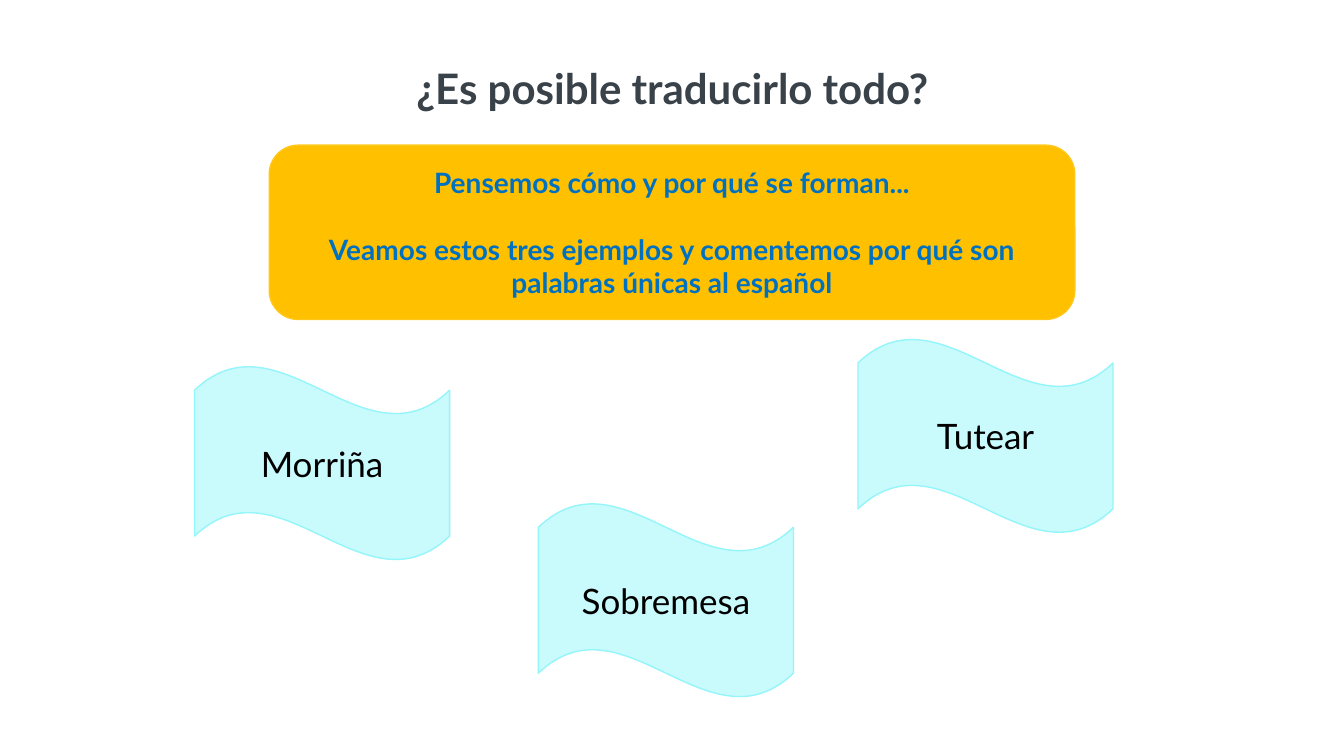
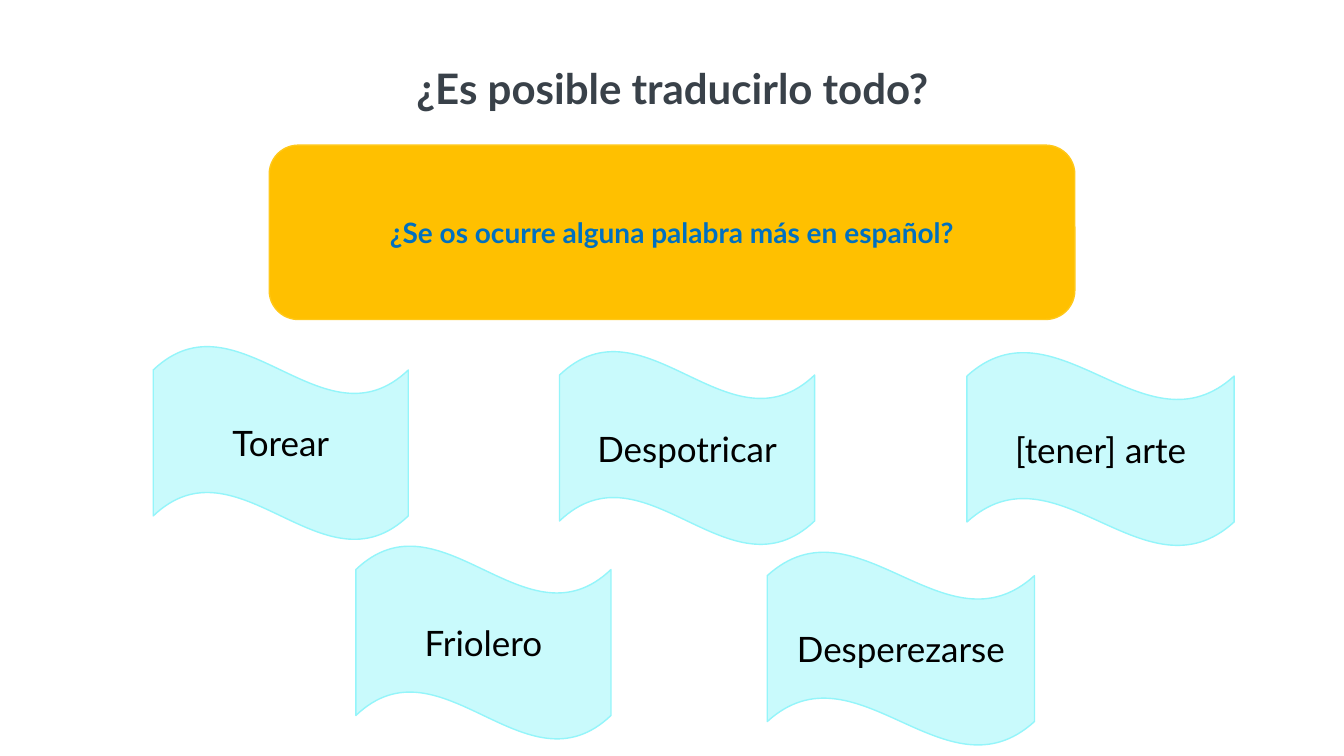
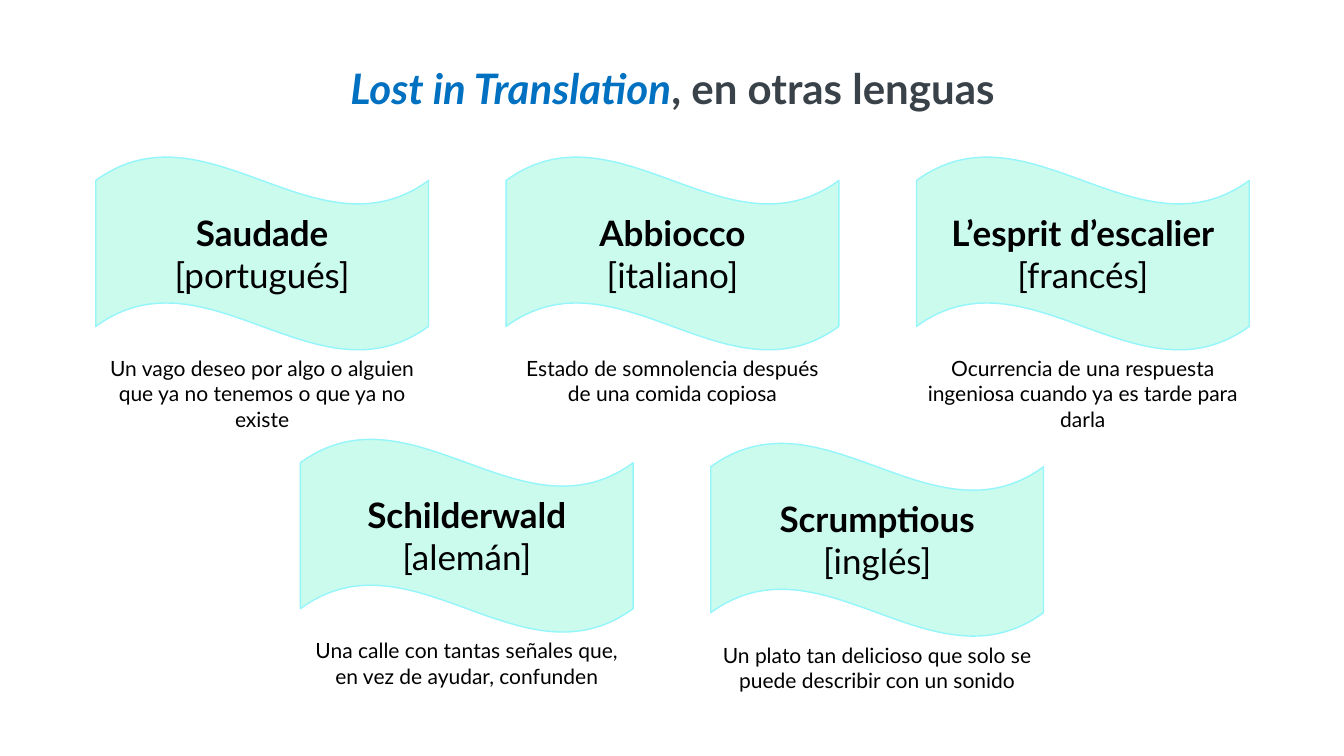
from pptx import Presentation
from pptx.dml.color import RGBColor
from pptx.enum.shapes import MSO_SHAPE
from pptx.enum.text import MSO_ANCHOR, MSO_AUTO_SIZE, PP_ALIGN
from pptx.util import Pt

PX = 9144
FONT = "Lato"
TITLE_ONLY = 5
WAVE = MSO_SHAPE.WAVE
ROUNDED = MSO_SHAPE.ROUNDED_RECTANGLE
TOP, MIDDLE = MSO_ANCHOR.TOP, MSO_ANCHOR.MIDDLE
CENTER = PP_ALIGN.CENTER
FIXED, GROW = MSO_AUTO_SIZE.NONE, MSO_AUTO_SIZE.SHAPE_TO_FIT_TEXT

COLORS = {
    "title": "394149",
    "accent": "0070C0",
    "text": "000000",
    "banner": "FFC000",
    "banner_line": "FFC819",
    "spanish_wave": "C9FAFC",
    "foreign_wave": "CAFBED",
    "wave_line": "94F5FA",
}

TITLE_BOX = (287, 57, 760, 61)
BANNER_BOX = (267, 144, 799, 173)
WAVE_HEIGHT = 193
CARD_WIDTH = 330
CARD_STEP = 407

QUESTION = [("¿Es posible traducirlo todo?", {})]

EXAMPLES = [
    ("Morriña", 193, 363, 253),
    ("Sobremesa", 534, 499, 253),
    ("Tutear", 851, 336, 253),
]
MORE_WORDS = [
    ("Torear", 152, 343, 253),
    ("Friolero", 353, 541, 253),
    ("Despotricar", 555, 348, 253),
    ("Desperezarse", 761, 547, 265),
    ("[tener] arte", 959, 349, 265),
]
FOREIGN_ROWS = [
    (95, [
        (155, "Saudade", "[portugués]", 3,
         "Un vago deseo por algo o alguien que ya no tenemos o que ya no existe"),
        (155, "Abbiocco", "[italiano]", 2,
         "Estado de somnolencia después de una comida copiosa"),
        (155, "L’esprit d’escalier", "[francés]", 3,
         "Ocurrencia de una respuesta ingeniosa cuando ya es tarde para darla"),
    ]),
    (298, [
        (435, "Schilderwald", "[alemán]", 2,
         "Una calle con tantas señales que, en vez de ayudar, confunden"),
        (439, "Scrumptious", "[inglés]", 2,
         "Un plato tan delicioso que solo se puede describir con un sonido"),
    ]),
]


def rgb(name):
    return RGBColor.from_string(COLORS[name])


def scaled(box):
    return [length * PX for length in box]


def write_text(shape, paragraphs, size, color="text", bold=False,
               anchor=MIDDLE, fit=FIXED, gap=0):
    frame = shape.text_frame
    frame.word_wrap = True
    frame.auto_size = fit
    frame.vertical_anchor = anchor
    for index, runs in enumerate(paragraphs):
        paragraph = frame.paragraphs[0] if index == 0 else frame.add_paragraph()
        paragraph.alignment = CENTER
        paragraph.space_before = Pt(gap if index else 0)
        for text, changes in runs:
            run = paragraph.add_run()
            run.text = text
            run.font.name = FONT
            run.font.size = Pt(size)
            run.font.bold = changes.get("bold", bold)
            run.font.italic = changes.get("italic", False)
            run.font.color.rgb = rgb(changes.get("color", color))


def add_filled_shape(slide, kind, box, fill, line):
    shape = slide.shapes.add_shape(kind, *scaled(box))
    shape.shadow.inherit = False
    shape.fill.solid()
    shape.fill.fore_color.rgb = rgb(fill)
    shape.line.color.rgb = rgb(line)
    shape.line.width = Pt(1)
    return shape


def add_titled_slide(presentation, title_runs):
    slide = presentation.slides.add_slide(presentation.slide_layouts[TITLE_ONLY])
    title = slide.shapes.title
    title.left, title.top, title.width, title.height = scaled(TITLE_BOX)
    write_text(title, [title_runs], size=30, color="title", bold=True, anchor=TOP)
    return slide


def add_banner(slide, box, lines):
    banner = add_filled_shape(slide, ROUNDED, box, "banner", "banner_line")
    write_text(banner, [[(line, {})] for line in lines],
               size=20, color="accent", bold=True, gap=24)


def add_wave(slide, box, paragraphs, fill):
    wave = add_filled_shape(slide, WAVE, box, fill, "wave_line")
    write_text(wave, paragraphs, size=25)


def add_word_card(slide, left, top, word, language, line_count, meaning):
    add_wave(slide, (left, top, CARD_WIDTH, WAVE_HEIGHT),
             [[(word, {"bold": True})], [(language, {})]], "foreign_wave")
    box = (left, top + WAVE_HEIGHT, CARD_WIDTH, 11 + 25 * line_count)
    definition = slide.shapes.add_textbox(*scaled(box))
    write_text(definition, [[(meaning, {})]], size=15, anchor=TOP, fit=GROW)


def build_spanish_slide(presentation, banner_lines, words):
    slide = add_titled_slide(presentation, QUESTION)
    add_banner(slide, BANNER_BOX, banner_lines)
    for word, left, top, width in words:
        add_wave(slide, (left, top, width, WAVE_HEIGHT), [[(word, {})]], "spanish_wave")


def build_foreign_slide(presentation):
    slide = add_titled_slide(presentation, [
        ("Lost in Translation", {"color": "accent", "italic": True}),
        (", en otras lenguas", {}),
    ])
    for row_left, cards in FOREIGN_ROWS:
        for column, card in enumerate(cards):
            add_word_card(slide, row_left + column * CARD_STEP, *card)


def main():
    presentation = Presentation()
    presentation.slide_width, presentation.slide_height = scaled((1333, 750))
    build_spanish_slide(presentation, [
        "Pensemos cómo y por qué se forman...",
        "Veamos estos tres ejemplos y comentemos por qué son palabras únicas al español",
    ], EXAMPLES)
    build_spanish_slide(
        presentation, ["¿Se os ocurre alguna palabra más en español?"], MORE_WORDS)
    build_foreign_slide(presentation)
    presentation.save("out.pptx")


if __name__ == "__main__":
    main()
